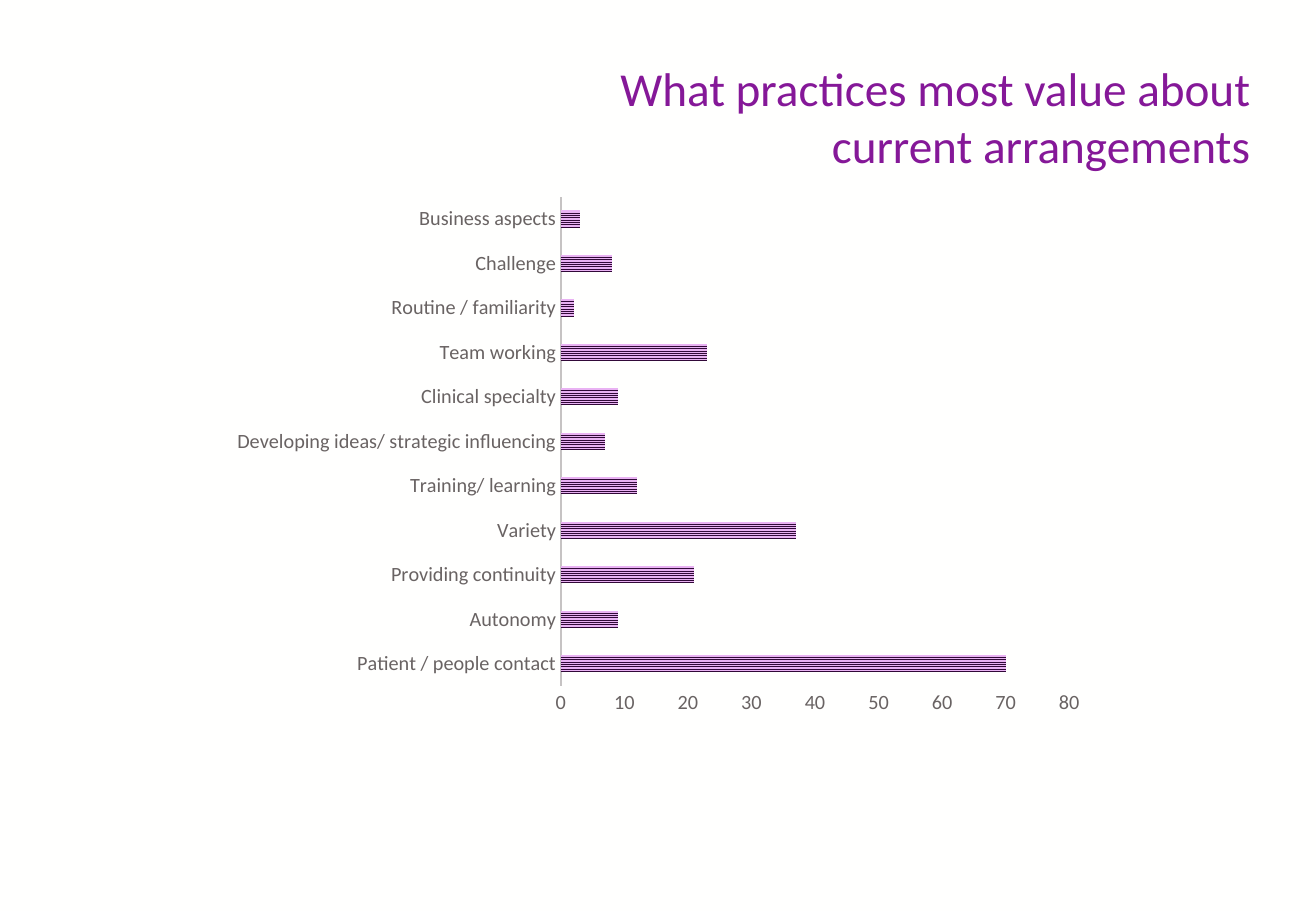
import dataclasses
from typing import Any

import pptx
import pptx.chart.data
import pptx.dml.color
import pptx.enum.chart
import pptx.enum.dml
import pptx.enum.text
import pptx.util

Pt = pptx.util.Pt
RGBColor = pptx.dml.color.RGBColor

BACKGROUND = RGBColor(0xFF, 0xFF, 0xFE)
TITLE_PURPLE = RGBColor(0x85, 0x18, 0x98)
CHART_TEXT = RGBColor(0x14, 0x13, 0x13)
LABEL_GREY = RGBColor(0x69, 0x63, 0x63)
AXIS_GREY = RGBColor(0xC6, 0xC3, 0xC3)
STRIPE_DARK = RGBColor(0x31, 0x09, 0x38)
STRIPE_LIGHT = RGBColor(0xE9, 0xB2, 0xF3)
FONT_NAME = "Calibri"


@dataclasses.dataclass(frozen=True)
class ValuedAspect:
    label: str
    count: int


# Listed from the bottom bar to the top bar
ASPECTS = [
    ValuedAspect("Patient / people contact", 70),
    ValuedAspect("Autonomy", 9),
    ValuedAspect("Providing continuity", 21),
    ValuedAspect("Variety", 37),
    ValuedAspect("Training/ learning", 12),
    ValuedAspect("Developing ideas/ strategic influencing", 7),
    ValuedAspect("Clinical specialty", 9),
    ValuedAspect("Team working", 23),
    ValuedAspect("Routine / familiarity", 2),
    ValuedAspect("Challenge", 8),
    ValuedAspect("Business aspects", 3),
]

TITLE_FRAME = {
    "word_wrap": True,
    "vertical_anchor": pptx.enum.text.MSO_ANCHOR.MIDDLE,
    "margin_left": Pt(36),
}
AXIS_FORMAT = {
    "has_major_gridlines": False,
    "has_minor_gridlines": False,
    "major_tick_mark": pptx.enum.chart.XL_TICK_MARK.NONE,
    "minor_tick_mark": pptx.enum.chart.XL_TICK_MARK.NONE,
}
VALUE_SCALE = {"minimum_scale": 0, "maximum_scale": 80, "major_unit": 10}


def set_attributes(target: Any, values: dict[str, Any]) -> None:
    for name, value in values.items():
        setattr(target, name, value)


def set_font(font: Any, size: float, color: RGBColor) -> None:
    set_attributes(font, {"name": FONT_NAME, "size": Pt(size), "bold": False})
    font.color.rgb = color


def add_title(slide: Any, text: str) -> None:
    shape = slide.shapes.add_textbox(Pt(271.5), Pt(41.75), Pt(476.5), Pt(54))
    set_attributes(shape.text_frame, TITLE_FRAME)
    paragraph = shape.text_frame.paragraphs[0]
    paragraph.alignment = pptx.enum.text.PP_ALIGN.RIGHT
    run = paragraph.add_run()
    run.text = text
    set_font(run.font, 28, TITLE_PURPLE)


def add_aspect_chart(slide: Any, aspects: list[ValuedAspect]) -> None:
    data = pptx.chart.data.CategoryChartData()
    data.categories = [aspect.label for aspect in aspects]
    data.add_series("Series 1", [aspect.count for aspect in aspects])
    chart = slide.shapes.add_chart(
        pptx.enum.chart.XL_CHART_TYPE.BAR_CLUSTERED,
        Pt(130.25), Pt(110.25), Pt(520), Pt(319.75), data,
    ).chart
    set_attributes(chart, {"has_legend": False, "has_title": False})
    set_font(chart.font, 10, CHART_TEXT)

    # Axes
    for axis in (chart.category_axis, chart.value_axis):
        set_attributes(axis, AXIS_FORMAT)
        set_font(axis.tick_labels.font, 12, LABEL_GREY)
    set_attributes(chart.value_axis, VALUE_SCALE)
    chart.value_axis.format.line.fill.background()
    category_line = chart.category_axis.format.line
    category_line.color.rgb = AXIS_GREY
    category_line.width = Pt(1.5)

    # Striped bars
    plot = chart.plots[0]
    set_attributes(plot, {"gap_width": 164, "vary_by_categories": False})
    fill = plot.series[0].format.fill
    fill.patterned()
    fill.pattern = pptx.enum.dml.MSO_PATTERN.NARROW_HORIZONTAL
    fill.fore_color.rgb = STRIPE_DARK
    fill.back_color.rgb = STRIPE_LIGHT


def main() -> None:
    presentation = pptx.Presentation()
    set_attributes(presentation, {"slide_width": Pt(780), "slide_height": Pt(540)})
    slide = presentation.slides.add_slide(presentation.slide_layouts[6])
    slide.background.fill.solid()
    slide.background.fill.fore_color.rgb = BACKGROUND

    add_title(slide, "What practices most value about current arrangements")
    add_aspect_chart(slide, ASPECTS)
    presentation.save("out.pptx")


if __name__ == "__main__":
    main()
